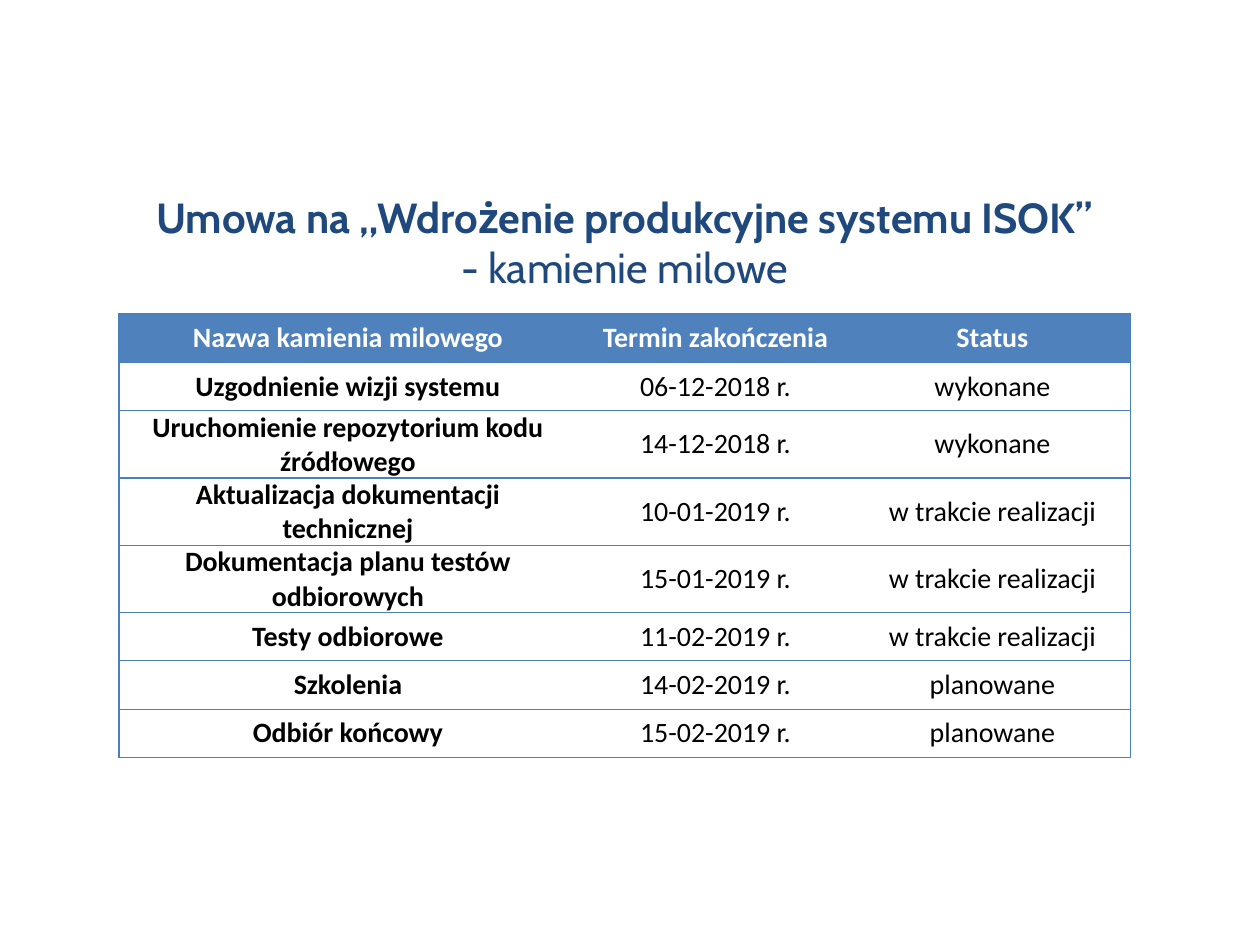
import pptx
import pptx.dml.color
import pptx.enum.text
import pptx.oxml.ns
import pptx.util
from lxml import etree

SCALE = 914400 / 126
NAVY = "1F497D"
HEADER_BLUE = "4F81BD"
BORDER_BLUE = "4B7EBC"
WHITE = "FFFFFF"
BLACK = "000000"
CENTER = pptx.enum.text.PP_ALIGN.CENTER
MIDDLE = pptx.enum.text.MSO_ANCHOR.MIDDLE

TITLE_LINES = [
    ("Umowa na „Wdrożenie produkcyjne systemu ISOK”", True),
    ("- kamienie milowe", False),
]
MILESTONES = [
    ("Nazwa kamienia milowego", "Termin zakończenia", "Status"),
    ("Uzgodnienie wizji systemu", "06-12-2018 r.", "wykonane"),
    ("Uruchomienie repozytorium kodu źródłowego", "14-12-2018 r.", "wykonane"),
    ("Aktualizacja dokumentacji technicznej", "10-01-2019 r.", "w trakcie realizacji"),
    ("Dokumentacja planu testów odbiorowych", "15-01-2019 r.", "w trakcie realizacji"),
    ("Testy odbiorowe", "11-02-2019 r.", "w trakcie realizacji"),
    ("Szkolenia", "14-02-2019 r.", "planowane"),
    ("Odbiór końcowy", "15-02-2019 r.", "planowane"),
]
COLUMN_WIDTHS = [458, 277, 277]


def px(length):
    return pptx.util.Emu(round(length * SCALE))


def color(value):
    return pptx.dml.color.RGBColor.from_string(value)


def apply_format(target, values):
    for name, value in values.items():
        setattr(target, name, value)


def write_paragraph(para, text, font, size, bold, fill):
    para.alignment = CENTER
    span = para.add_run()
    span.text = text
    apply_format(span.font, {"name": font, "size": pptx.util.Pt(size), "bold": bold})
    span.font.color.rgb = color(fill)


def add_title(page):
    box = page.shapes.add_textbox(px(64), px(185), px(1121), px(115))
    frame = box.text_frame
    apply_format(frame, {
        "word_wrap": True,
        "auto_size": pptx.enum.text.MSO_AUTO_SIZE.SHAPE_TO_FIT_TEXT,
    })
    for index, (text, bold) in enumerate(TITLE_LINES):
        para = frame.add_paragraph() if index else frame.paragraphs[0]
        write_paragraph(para, text, "Cabin", 24, bold, NAVY)


def set_borders(cell, visible_sides):
    properties = cell._tc.get_or_add_tcPr()
    qualified = pptx.oxml.ns.qn
    for side in "LRTB":
        line = etree.SubElement(properties, qualified(f"a:ln{side}"), w=str(pptx.util.Pt(0.75)))
        if side in visible_sides:
            fill = etree.SubElement(line, qualified("a:solidFill"))
            etree.SubElement(fill, qualified("a:srgbClr"), val=BORDER_BLUE)
        else:
            etree.SubElement(line, qualified("a:noFill"))


def format_cell(cell, text, row, column):
    is_header = row == 0
    apply_format(cell, {
        "vertical_anchor": MIDDLE,
        "margin_left": px(9), "margin_right": px(9),
        "margin_top": 0, "margin_bottom": 0,
    })
    outer_side = {0: "L", len(COLUMN_WIDTHS) - 1: "R"}.get(column, "")
    set_borders(cell, "TB" + outer_side)
    if is_header:
        cell.fill.solid()
        cell.fill.fore_color.rgb = color(HEADER_BLUE)
    else:
        cell.fill.background()
    write_paragraph(cell.text_frame.paragraphs[0], text, "Calibri", 16,
                    is_header or column == 0, WHITE if is_header else BLACK)


def add_milestone_table(page):
    frame = page.shapes.add_table(len(MILESTONES), len(COLUMN_WIDTHS), px(119), px(314),
                                  px(sum(COLUMN_WIDTHS)), px(387))
    table = frame.table
    table.horz_banding = False
    for column, width in zip(table.columns, COLUMN_WIDTHS):
        column.width = px(width)
    for row, texts in enumerate(MILESTONES):
        for column, text in enumerate(texts):
            format_cell(table.cell(row, column), text, row, column)
    frame.height = px(444)


def main():
    deck = pptx.Presentation()
    apply_format(deck, {"slide_width": px(1260), "slide_height": px(945)})
    page = deck.slides.add_slide(deck.slide_layouts[6])
    add_title(page)
    add_milestone_table(page)
    deck.save("out.pptx")


if __name__ == "__main__":
    main()
